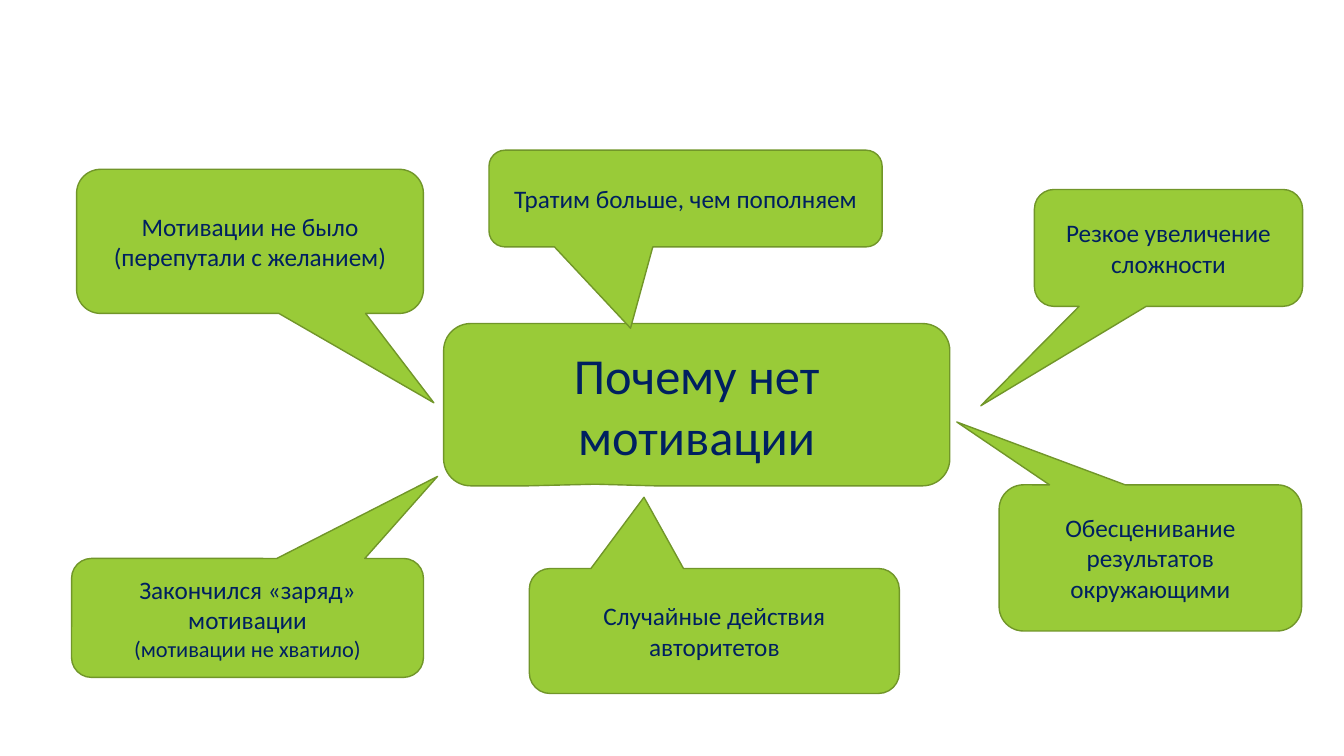
import dataclasses

import pptx
import pptx.dml.color
import pptx.enum.shapes
import pptx.enum.text
import pptx.util

Inches = pptx.util.Inches
Pt = pptx.util.Pt


@dataclasses.dataclass(frozen=True)
class Theme:
    font: str = "Calibri"
    text: str = "002060"
    fill: str = "99CB38"
    outline: str = "719629"
    topic_size: int = 36
    reason_size: int = 18
    note_size: int = 16
    line_width: int = 1


class MindMap:
    def __init__(self, page, theme):
        self.page = page
        self.theme = theme

    def callout(self, position, tip, lines):
        """Add a callout; tip is its pointer's offset from the centre, as shares of width and height."""
        theme = self.theme
        box = self.page.shapes.add_shape(
            pptx.enum.shapes.MSO_SHAPE.ROUNDED_RECTANGULAR_CALLOUT,
            *(Inches(length) for length in position))
        box.adjustments[0], box.adjustments[1] = tip
        box.shadow.inherit = False
        box.fill.solid()
        box.fill.fore_color.rgb = pptx.dml.color.RGBColor.from_string(theme.fill)
        box.line.color.rgb = pptx.dml.color.RGBColor.from_string(theme.outline)
        box.line.width = Pt(theme.line_width)

        frame = box.text_frame
        frame.word_wrap = True
        frame.vertical_anchor = pptx.enum.text.MSO_ANCHOR.MIDDLE
        for index, (text, size) in enumerate(lines):
            para = frame.add_paragraph() if index else frame.paragraphs[0]
            para.text = text
            para.alignment = pptx.enum.text.PP_ALIGN.CENTER
            para.font.name = theme.font
            para.font.size = Pt(size)
            para.font.color.rgb = pptx.dml.color.RGBColor.from_string(theme.text)

    def topic(self, position, tip, text):
        self.callout(position, tip, [(text, self.theme.topic_size)])

    def reason(self, position, tip, text, note=None):
        lines = [(text, self.theme.reason_size)]
        if note:
            lines.append((note, self.theme.note_size))
        self.callout(position, tip, lines)


def main():
    deck = pptx.Presentation()
    deck.slide_width = Inches(13.33)
    deck.slide_height = Inches(7.5)
    blank_layout = deck.slide_layouts[6]
    mind_map = MindMap(deck.slides.add_slide(blank_layout), Theme())

    mind_map.topic((4.4, 3.21, 5.02, 1.61), (-0.2, 0.49), "Почему нет мотивации")
    reasons = [
        ((10.26, 1.88, 2.66, 1.16), (-0.7, 1.35), "Резкое увеличение сложности"),
        ((0.71, 5.54, 3.49, 1.18), (0.54, -1.19), "Закончился «заряд» мотивации",
         "(мотивации не хватило)"),
        ((0.76, 1.68, 3.44, 1.43), (0.53, 1.12), "Мотивации не было (перепутали с желанием)"),
        ((4.85, 1.49, 3.9, 0.96), (-0.14, 1.34), "Тратим больше, чем пополняем"),
        ((9.91, 4.81, 3, 1.45), (-0.64, -0.93), "Обесценивание результатов окружающими"),
        ((5.25, 5.64, 3.67, 1.24), (-0.19, -1.07), "Случайные действия авторитетов"),
    ]
    for reason in reasons:
        mind_map.reason(*reason)

    deck.save("out.pptx")


if __name__ == "__main__":
    main()
